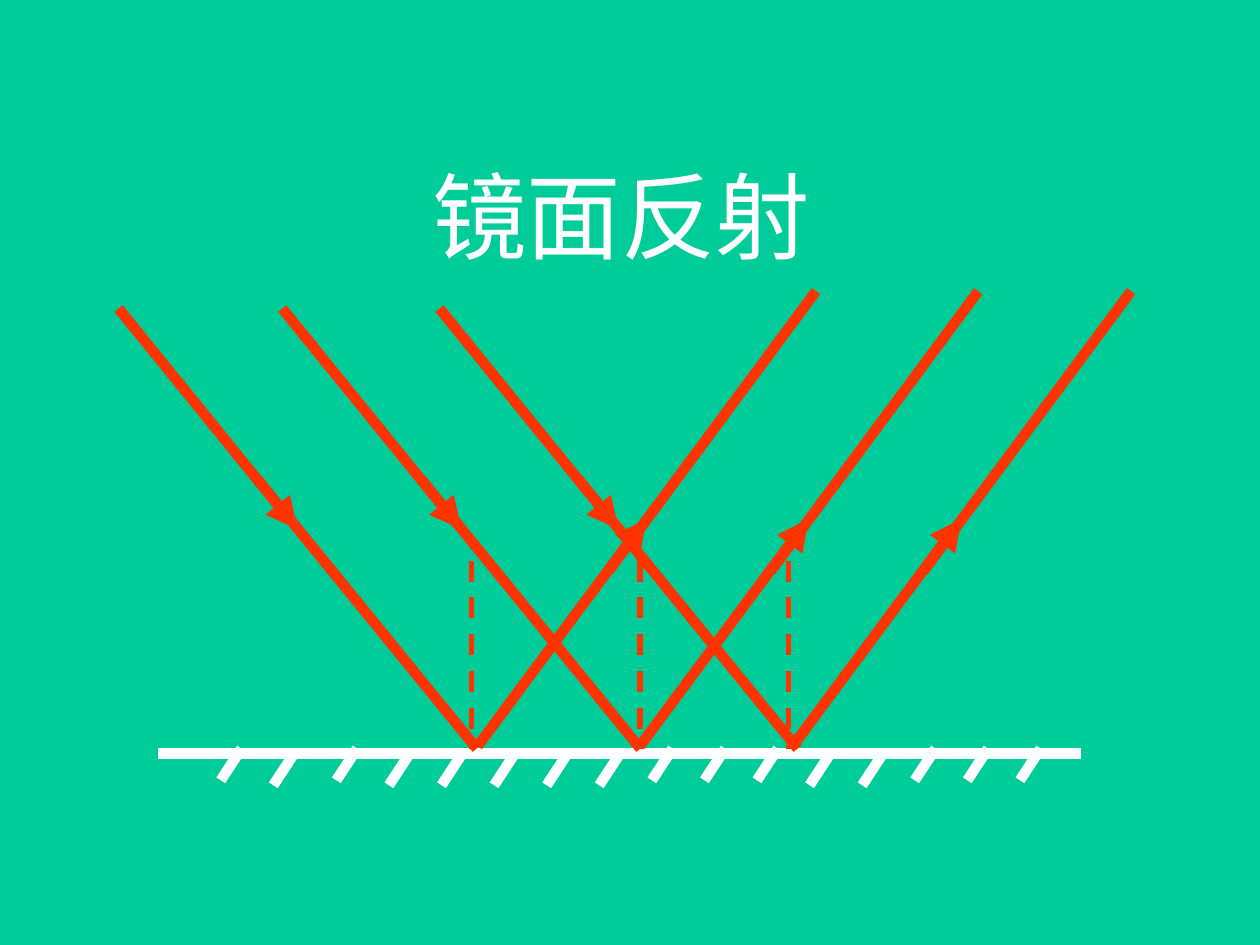
from dataclasses import dataclass

from pptx import Presentation
from pptx import util as u
from pptx.dml.color import RGBColor
from pptx.enum import dml, shapes, text
from pptx.oxml.ns import qn
from lxml import etree

GREEN, WHITE, RED = "00CC99", "FFFFFF", "FF3300"


@dataclass(frozen=True)
class Stroke:
    color: str
    width: float
    arrow: bool = False
    dashed: bool = False


@dataclass(frozen=True)
class Segment:
    """Line in centimetres; x values are measured from a starting point."""
    x1: float
    y1: float
    x2: float
    y2: float
    stroke: Stroke


def rgb(value: str) -> RGBColor:
    return RGBColor.from_string(value)


def draw_segment(group, segment: Segment, left: float = 0) -> None:
    line = group.shapes.add_connector(
        shapes.MSO_CONNECTOR.STRAIGHT,
        u.Cm(left + segment.x1), u.Cm(segment.y1),
        u.Cm(left + segment.x2), u.Cm(segment.y2))
    stroke = segment.stroke
    line.line.color.rgb = rgb(stroke.color)
    line.line.width = u.Pt(stroke.width)
    if stroke.dashed:
        line.line.dash_style = dml.MSO_LINE.DASH
    if stroke.arrow:
        outline = line.line._get_or_add_ln()
        etree.SubElement(outline, qn("a:tailEnd"), type="triangle")
    etree.SubElement(line._element.spPr, qn("a:effectLst"))


def draw_repeated(page, segments: list[Segment], lefts: list[float]) -> None:
    group = page.shapes.add_group_shape()
    for left in lefts:
        for segment in segments:
            draw_segment(group, segment, left)


def draw_mirror(page) -> None:
    group = page.shapes.add_group_shape()
    stroke = Stroke(WHITE, 6)
    draw_segment(group, Segment(3.18, 15.19, 21.8, 15.19, stroke))
    # Two strokes stand apart; the others are evenly spaced
    lefts = [4.87, 5.93] + [7.2 + 1.06 * i for i in range(14)]
    raised = {0, 2, 8, 9, 10, 13, 14, 15}
    for index, left in enumerate(lefts):
        top = 15.09 if index in raised else 15.19
        draw_segment(group, Segment(0, top, -0.42, top + 0.64, stroke), left)


def draw_title(page, wording: str) -> None:
    box = page.shapes.title
    place = {"left": 8.46, "top": 3.05, "width": 9.12, "height": 2.54}
    for name, value in place.items():
        setattr(box, name, u.Cm(value))
    frame_format = {
        "word_wrap": True,
        "auto_size": text.MSO_AUTO_SIZE.NONE,
        "vertical_anchor": text.MSO_ANCHOR.MIDDLE,
    }
    for name, value in frame_format.items():
        setattr(box.text_frame, name, value)
    para = box.text_frame.paragraphs[0]
    para.alignment = text.PP_ALIGN.LEFT
    span = para.add_run()
    span.text = wording
    for name, value in {"name": "Times New Roman", "size": u.Pt(54)}.items():
        setattr(span.font, name, value)
    span.font.color.rgb = rgb(WHITE)


def main() -> None:
    deck = Presentation()
    deck.slide_width, deck.slide_height = u.Cm(25.4), u.Cm(19.05)
    page = deck.slides.add_slide(deck.slide_layouts[5])
    page.background.fill.solid()
    page.background.fill.fore_color.rgb = rgb(GREEN)

    draw_mirror(page)

    # Each ray is an arrow continued by a plain line
    arrow, plain = Stroke(RED, 6, arrow=True), Stroke(RED, 6)
    incident = [Segment(0, 6.22, 3.61, 10.67, arrow),
                Segment(2.79, 9.65, 7.22, 15.09, plain)]
    reflected = [Segment(0, 15.04, 3.4, 10.46, arrow),
                 Segment(2.64, 11.51, 6.82, 5.87, plain)]
    draw_repeated(page, incident, [2.39, 5.69, 8.86])
    draw_repeated(page, reflected, [9.63, 12.9, 15.98])

    draw_title(page, "镜面反射")

    # Dashed normals at the points of reflection
    normal = Segment(0, 11.3, 0, 15.09, Stroke(RED, 3, dashed=True))
    draw_repeated(page, [normal], [9.5, 12.9, 15.9])

    deck.save("out.pptx")


if __name__ == "__main__":
    main()
